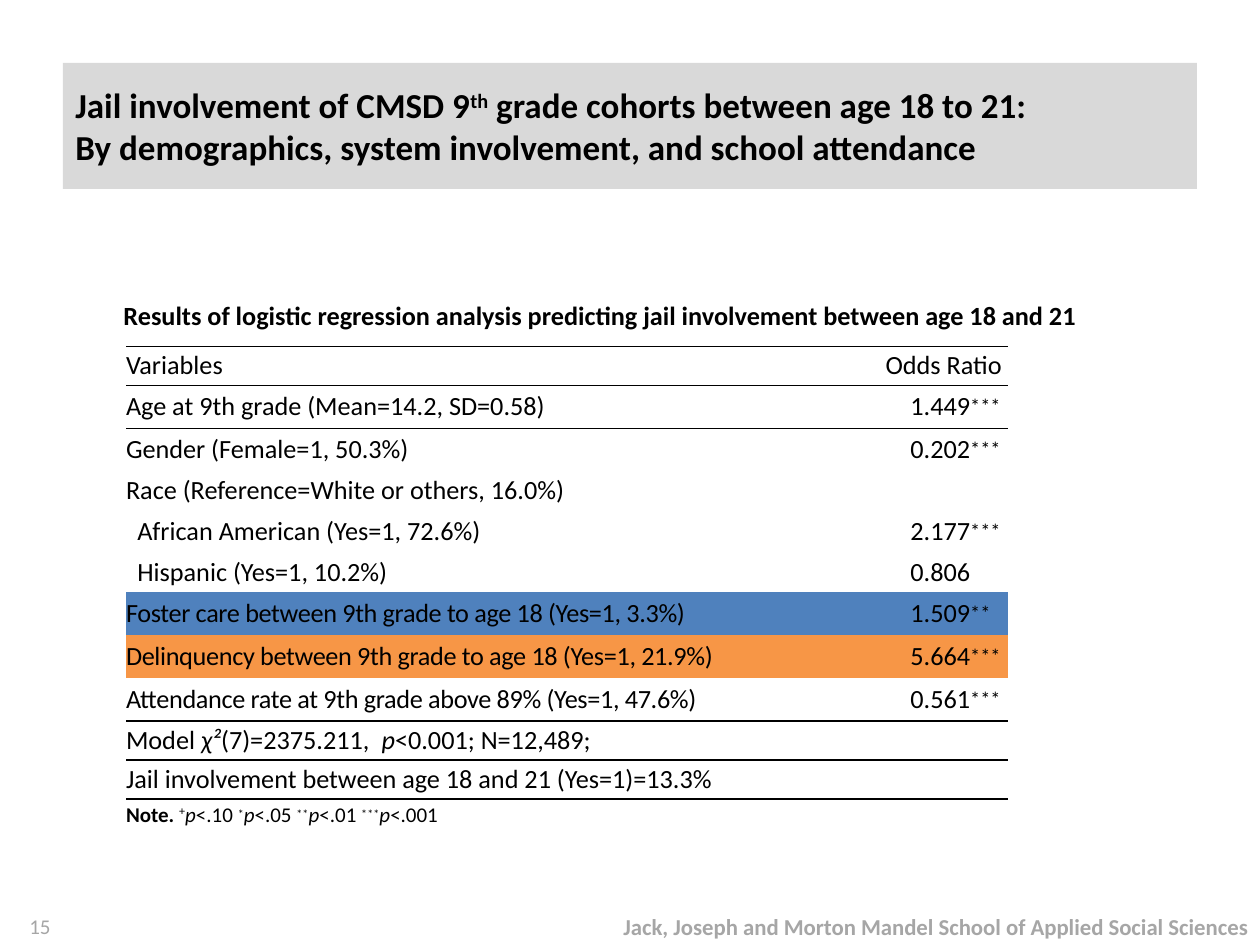
from lxml import etree
from pptx import Presentation
from pptx import util as u
from pptx.dml.color import RGBColor
from pptx.enum import shapes, text
from pptx.oxml.ns import qn

PX = 9144  # EMU per px, 100 px to the inch
FONT = "Calibri"
BLACK = RGBColor(0, 0, 0)
WHITE = RGBColor(255, 255, 255)
BANNER_GREY = RGBColor(0xD9, 0xD9, 0xD9)
FOOTER_GREY = RGBColor(0xA6, 0xA6, 0xA6)
FOSTER_BLUE = RGBColor(0x4F, 0x81, 0xBD)
DELINQUENCY_ORANGE = RGBColor(0xF7, 0x96, 0x46)
NO_STYLE = "{2D5ABB26-0587-4C30-8999-92F81FD0307C}"

LEFT, RIGHT = text.PP_ALIGN.LEFT, text.PP_ALIGN.RIGHT
ITALIC = {"italic": True}
STAR = {"baseline": 15}
P_VALUE = ("p", ITALIC)

COLUMN_WIDTHS = [500, 170, 30]
ROW_HEIGHTS = [31] * 7 + [33] * 2 + [31] * 2 + [25]
RULED_EDGES = {0, 1, 9, 11}
ROW_FILLS = {6: FOSTER_BLUE, 7: DELINQUENCY_ORANGE}

# label, odds ratio, significance, label format
PREDICTORS = [
    ("Age at 9th grade (Mean=14.2, SD=0.58)", "1.449", "***", {}),
    ("Gender (Female=1, 50.3%)", "0.202", "***", {}),
    ("Race (Reference=White or others, 16.0%)", "", "", {}),
    ("African American (Yes=1, 72.6%)", "2.177", "***", {"indent": 9}),
    ("Hispanic (Yes=1, 10.2%)", "0.806", "", {"indent": 9}),
    ("Foster care between 9th grade to age 18 (Yes=1, 3.3%)", "1.509", "**", {"spacing": -20}),
    ("Delinquency between 9th grade to age 18 (Yes=1, 21.9%)", "5.664", "***", {"spacing": -20}),
    ("Attendance rate at 9th grade above 89% (Yes=1, 47.6%)", "0.561", "***", {"spacing": -20}),
]
MODEL_FIT = ["Model ", ("χ²", ITALIC), "(7)=2375.211,  ", P_VALUE, "<0.001; N=12,489;"]
PREVALENCE = ["Jail involvement between age 18 and 21 (Yes=1)=13.3%"]
NOTE = [("Note. ", {"bold": True}), ("+", {"baseline": 30}), P_VALUE, "<.10 ",
        ("*", STAR), P_VALUE, "<.05 ", ("**", STAR), P_VALUE, "<.01 ",
        ("***", STAR), P_VALUE, "<.001"]


def format_run(run, size, color=BLACK, bold=False, italic=False, baseline=0, spacing=0):
    """Baseline is in percent, spacing in hundredths of a point."""
    font = run.font
    font.name, font.size, font.bold, font.italic = FONT, u.Pt(size), bold, italic
    font.color.rgb = color
    properties = run._r.get_or_add_rPr()
    if baseline:
        properties.set("baseline", str(baseline * 1000))
    if spacing:
        properties.set("spc", str(spacing))


def write_text(frame, runs, align=LEFT, **style):
    """Each run is a string, or a pair of a string and its own format."""
    paragraph = frame.paragraphs[0]
    paragraph.alignment = align
    for item in [runs] if isinstance(runs, str) else runs:
        words, own = (item, {}) if isinstance(item, str) else item
        for number, line in enumerate(words.split("\n")):
            if number:
                paragraph.add_line_break()
            run = paragraph.add_run()
            run.text = line
            format_run(run, **{**style, **own})


def add_panel(slide, box, runs, fill=None, insets=(10, 5, 10, 5), **style):
    panel = slide.shapes.add_shape(shapes.MSO_SHAPE.RECTANGLE, *[side * PX for side in box])
    panel.shadow.inherit = False
    panel.line.fill.background()
    if fill is None:
        panel.fill.background()
    else:
        panel.fill.solid()
        panel.fill.fore_color.rgb = fill
    frame = panel.text_frame
    frame.word_wrap = True
    frame.vertical_anchor = text.MSO_ANCHOR.MIDDLE
    (frame.margin_left, frame.margin_top,
     frame.margin_right, frame.margin_bottom) = [inset * PX for inset in insets]
    write_text(frame, runs, **style)


def rule_cell(cell, edge):
    line = etree.SubElement(cell._tc.get_or_add_tcPr(), qn(f"a:{edge}"), w=str(u.Pt(1)))
    solid = etree.SubElement(line, qn("a:solidFill"))
    etree.SubElement(solid, qn("a:srgbClr"), val=str(BLACK))


def prepare_cell(cell, row):
    cell.margin_left = cell.margin_top = cell.margin_right = cell.margin_bottom = 0
    cell.vertical_anchor = text.MSO_ANCHOR.MIDDLE
    if row in RULED_EDGES:
        rule_cell(cell, "lnT")
    if row + 1 in RULED_EDGES:
        rule_cell(cell, "lnB")
    if row in ROW_FILLS:
        cell.fill.solid()
        cell.fill.fore_color.rgb = ROW_FILLS[row]
    else:
        cell.fill.background()


def add_regression_table(slide):
    frame = slide.shapes.add_table(len(ROW_HEIGHTS), len(COLUMN_WIDTHS), 100 * PX, 275 * PX,
                                   sum(COLUMN_WIDTHS) * PX, sum(ROW_HEIGHTS) * PX)
    table = frame.table
    table.first_row = table.horz_banding = False
    table._tbl.tblPr.find(qn("a:tableStyleId")).text = NO_STYLE
    for column, width in zip(table.columns, COLUMN_WIDTHS):
        column.width = width * PX
    for number, (row, height) in enumerate(zip(table.rows, ROW_HEIGHTS)):
        row.height = height * PX
        for cell in row.cells:
            prepare_cell(cell, number)

    write_text(table.cell(0, 0).text_frame, "Variables", size=15)
    ratio_head = table.cell(0, 1)
    ratio_head.merge(table.cell(0, 2))
    ratio_head.margin_right = 5 * PX
    write_text(ratio_head.text_frame, "Odds Ratio", align=RIGHT, size=15)

    for row, (label, ratio, stars, label_format) in enumerate(PREDICTORS, start=1):
        style = dict(label_format)
        label_cell, ratio_cell, stars_cell = table.rows[row].cells
        label_cell.margin_left = style.pop("indent", 0) * PX
        write_text(label_cell.text_frame, label, size=15, **style)
        if ratio:
            write_text(ratio_cell.text_frame, ratio, align=RIGHT, size=15)
        if stars:
            write_text(stars_cell.text_frame, stars, size=20, baseline=15)

    summaries = [(MODEL_FIT, 15), (PREVALENCE, 15), (NOTE, 12)]
    for row, (runs, size) in enumerate(summaries, start=len(PREDICTORS) + 1):
        write_text(table.cell(row, 0).text_frame, runs, size=size)
        for column in (1, 2):
            paragraph = table.cell(row, column).text_frame.paragraphs[0]
            etree.SubElement(paragraph._p, qn("a:endParaRPr"), sz=str(size * 100))
        table.cell(row, 1).merge(table.cell(row, 2))


def main():
    deck = Presentation()
    deck.slide_width, deck.slide_height = 1000 * PX, 750 * PX
    slide = deck.slides.add_slide(deck.slide_layouts[6])
    add_panel(slide, (400, 720, 600, 30),
              "Jack, Joseph and Morton Mandel School of Applied Social Sciences",
              align=RIGHT, size=13, color=FOOTER_GREY, bold=True)
    add_panel(slide, (0, 720, 50, 30), "15", align=RIGHT, size=12, color=FOOTER_GREY)
    add_panel(slide, (70, 225, 860, 50),
              "Results of logistic regression analysis predicting jail involvement"
              " between age 18 and 21",
              fill=WHITE, insets=(28, 0, 0, 0), size=15, bold=True)
    add_panel(slide, (50, 50, 900, 100),
              ["Jail involvement of CMSD 9", ("th", {"baseline": 30}),
               " grade cohorts between age 18 to 21:\n"
               "By demographics, system involvement, and school attendance"],
              fill=BANNER_GREY, size=20, bold=True)
    add_regression_table(slide)
    deck.save("out.pptx")


if __name__ == "__main__":
    main()
